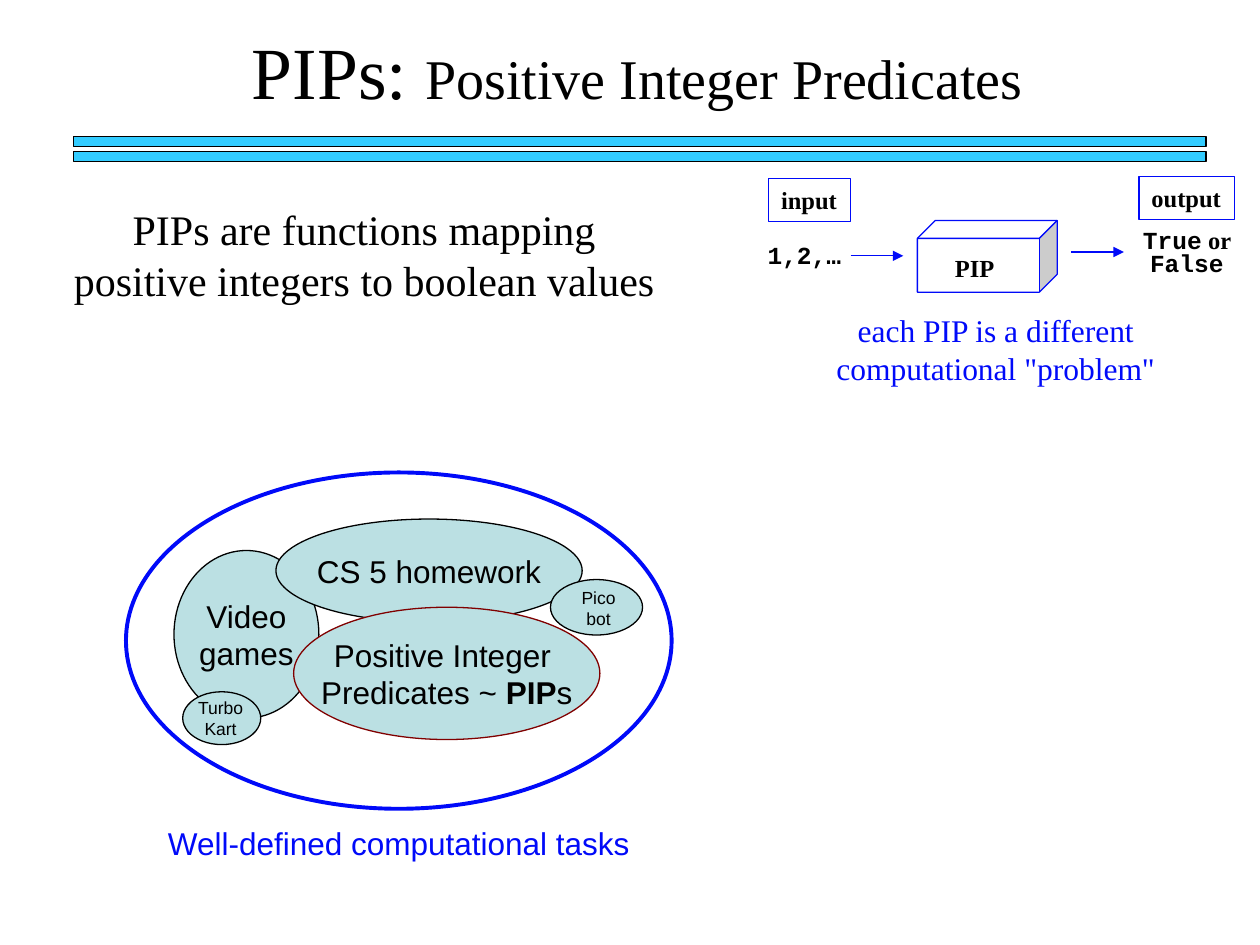
"""Build the slide that introduces positive integer predicates."""
from dataclasses import dataclass
from typing import Optional

from lxml.etree import SubElement
from pptx import Presentation
from pptx.dml.color import RGBColor
from pptx.enum.shapes import MSO_CONNECTOR, MSO_SHAPE
from pptx.enum.text import MSO_ANCHOR, PP_ALIGN
from pptx.oxml.ns import qn
from pptx.shapes.base import BaseShape
from pptx.slide import Slide
from pptx.util import Pt


@dataclass(frozen=True)
class Theme:
    """Hold the colours, fonts and type sizes of the slide."""
    black: str = "000000"
    white: str = "FFFFFF"
    blue: str = "000AF9"
    cyan: str = "33CCFF"
    teal: str = "BBE0E3"
    maroon: str = "800000"
    serif: str = "Times New Roman"
    sans: str = "Arial"
    mono: str = "Courier New"
    title: float = 42
    subtitle: float = 32
    lead: float = 24
    body: float = 18
    label: float = 14
    small: float = 10
    thin: float = 0.75
    thick: float = 2.25


THEME = Theme()


@dataclass(frozen=True)
class Box:
    """Place an element in points."""
    left: float
    top: float
    width: float
    height: float

    def lengths(self) -> tuple[Pt, Pt, Pt, Pt]:
        """Return the four lengths for python-pptx."""
        return Pt(self.left), Pt(self.top), Pt(self.width), Pt(self.height)


@dataclass(frozen=True)
class Span:
    """Describe a stretch of text in one style."""
    text: str
    size: float
    font: str = THEME.serif
    color: str = THEME.black
    bold: bool = False


@dataclass(frozen=True)
class Label:
    """Describe text as lines of spans."""
    lines: tuple[tuple[Span, ...], ...]
    centred: bool = True
    wrap: bool = True
    spacing: float = 1.0
    anchor: MSO_ANCHOR = MSO_ANCHOR.TOP


@dataclass(frozen=True)
class Figure:
    """Describe a preset shape and its optional label."""
    kind: MSO_SHAPE
    box: Box
    fill: Optional[str] = None
    line: str = THEME.black
    weight: float = THEME.thin
    label: Optional[Label] = None


@dataclass(frozen=True)
class Arrow:
    """Describe a horizontal arrow."""
    left: float
    top: float
    length: float = 30.2


def single(text: str, size: float, font: str = THEME.serif, color: str = THEME.black) -> Label:
    """Make a centred label in one style."""
    return Label(((Span(text, size, font, color),),))


def tag(text: str) -> Label:
    """Make a bold, unwrapped label for the diagram."""
    return Label(((Span(text, THEME.label, bold=True),),), centred=False, wrap=False)


def region(*lines: tuple[Span, ...]) -> Label:
    """Make a label for the middle of an ellipse."""
    return Label(lines, wrap=False, anchor=MSO_ANCHOR.MIDDLE)


def sans(text: str, size: float = THEME.body, bold: bool = False) -> Span:
    """Make a sans-serif span."""
    return Span(text, size, THEME.sans, bold=bold)


def code(text: str) -> Span:
    """Make a bold monospaced span."""
    return Span(text, THEME.label, THEME.mono, bold=True)


def write_label(shape: BaseShape, label: Label) -> None:
    """Write and format a label in a shape."""
    text_frame = shape.text_frame
    text_frame.text = "\n".join(line[0].text for line in label.lines)
    text_frame.word_wrap = label.wrap
    text_frame.vertical_anchor = label.anchor
    for paragraph, line in zip(text_frame.paragraphs, label.lines):
        paragraph.alignment = PP_ALIGN.CENTER if label.centred else PP_ALIGN.LEFT
        paragraph.line_spacing = label.spacing
        for span in line[1:]:
            paragraph.add_run().text = span.text
        for run, span in zip(paragraph.runs, line):
            run.font.name = span.font
            run.font.size = Pt(span.size)
            run.font.bold = span.bold
            run.font.color.rgb = RGBColor.from_string(span.color)


def draw_figure(slide: Slide, figure: Figure) -> None:
    """Draw a preset shape."""
    shape = slide.shapes.add_shape(figure.kind, *figure.box.lengths())
    shape.shadow.inherit = False
    if figure.fill:
        shape.fill.solid()
        shape.fill.fore_color.rgb = RGBColor.from_string(figure.fill)
    else:
        shape.fill.background()
    shape.line.color.rgb = RGBColor.from_string(figure.line)
    shape.line.width = Pt(figure.weight)
    if figure.label:
        write_label(shape, figure.label)


def draw_text(slide: Slide, box: Box, label: Label) -> None:
    """Draw a text box."""
    write_label(slide.shapes.add_textbox(*box.lengths()), label)


def draw_arrow(slide: Slide, arrow: Arrow) -> None:
    """Draw an arrow with a triangular head."""
    connector = slide.shapes.add_connector(
        MSO_CONNECTOR.STRAIGHT, Pt(arrow.left), Pt(arrow.top),
        Pt(arrow.left + arrow.length), Pt(arrow.top))
    connector.line.color.rgb = RGBColor.from_string(THEME.blue)
    connector.line.width = Pt(THEME.thin)
    properties = connector._element.spPr
    SubElement(properties.get_or_add_ln(), qn("a:tailEnd"), type="triangle")
    SubElement(properties, qn("a:effectLst"))


BARS = [Figure(MSO_SHAPE.RECTANGLE, Box(41.8, top, 647.3, 5.8), THEME.cyan)
        for top in (77.8, 86.4)]
MACHINE = [
    Figure(MSO_SHAPE.RECTANGLE, Box(439.2, 102.2, 46.8, 24.5), line=THEME.blue, label=tag("input")),
    Figure(MSO_SHAPE.RECTANGLE, Box(650.9, 100.8, 54.7, 24.5), line=THEME.blue, label=tag("output")),
    Figure(MSO_SHAPE.CUBE, Box(524.2, 126, 79.9, 41), THEME.white, THEME.blue),
]
ARROWS = [Arrow(486, 146.2), Arrow(612, 144)]
TASKS = [
    Figure(MSO_SHAPE.OVAL, Box(72, 270, 311.8, 192.2), line=THEME.blue, weight=THEME.thick),
    Figure(MSO_SHAPE.OVAL, Box(99.4, 314.6, 82.8, 95.8), THEME.teal,
           label=region((sans("Video"),), (sans("games"),))),
    Figure(MSO_SHAPE.OVAL, Box(157.7, 296.6, 175, 59), THEME.teal,
           label=region((sans("CS 5 homework"),))),
    Figure(MSO_SHAPE.OVAL, Box(167.8, 347, 175, 75.6), THEME.teal, THEME.maroon,
           label=region((sans("Positive Integer "),),
                        (sans("Predicates ~"), sans(" PIP", bold=True), sans("s")))),
    Figure(MSO_SHAPE.OVAL, Box(314.6, 331.2, 52.6, 31.7), THEME.teal),
    Figure(MSO_SHAPE.OVAL, Box(104.4, 395.3, 44.6, 30.2), THEME.teal),
]
TEXTS = [
    (Box(132.5, 11.5, 463.7, 57.6), Label(((
        Span("PIPs: ", THEME.title), Span("Positive Integer Predicates", THEME.subtitle)),))),
    (Box(32.4, 113, 351.4, 65.5),
     single("PIPs are functions mapping positive integers to boolean values", THEME.lead)),
    (Box(645.1, 128.2, 66.2, 33.8), Label(((
        code("True"), Span(" or ", THEME.label, bold=True), code("False")),), spacing=0.8)),
    (Box(538.6, 141.1, 44, 23.8), tag("PIP")),
    (Box(415.4, 133.9, 88.6, 23.8), Label(((code("1,2,…"),),))),
    (Box(458.6, 174.2, 221, 50.4),
     single('each PIP is a different computational "problem"', THEME.body, color=THEME.blue)),
    (Box(54.7, 467.3, 346.3, 28.8),
     single("Well-defined computational tasks", THEME.body, THEME.sans, THEME.blue)),
    (Box(99.4, 394.6, 53.3, 31), single("Turbo Kart", THEME.small, THEME.sans)),
    (Box(315.4, 331.9, 53.3, 31.7),
     Label(((sans("Pico", THEME.small),), (sans("bot", THEME.small),)))),
]


def main() -> None:
    """Build and save the presentation."""
    presentation = Presentation()
    presentation.slide_width, presentation.slide_height = Pt(720), Pt(540)
    slide = presentation.slides.add_slide(presentation.slide_layouts[6])
    for figure in BARS + MACHINE + TASKS:
        draw_figure(slide, figure)
    for arrow in ARROWS:
        draw_arrow(slide, arrow)
    for box, label in TEXTS:
        draw_text(slide, box, label)
    presentation.save("out.pptx")


if __name__ == "__main__":
    main()
